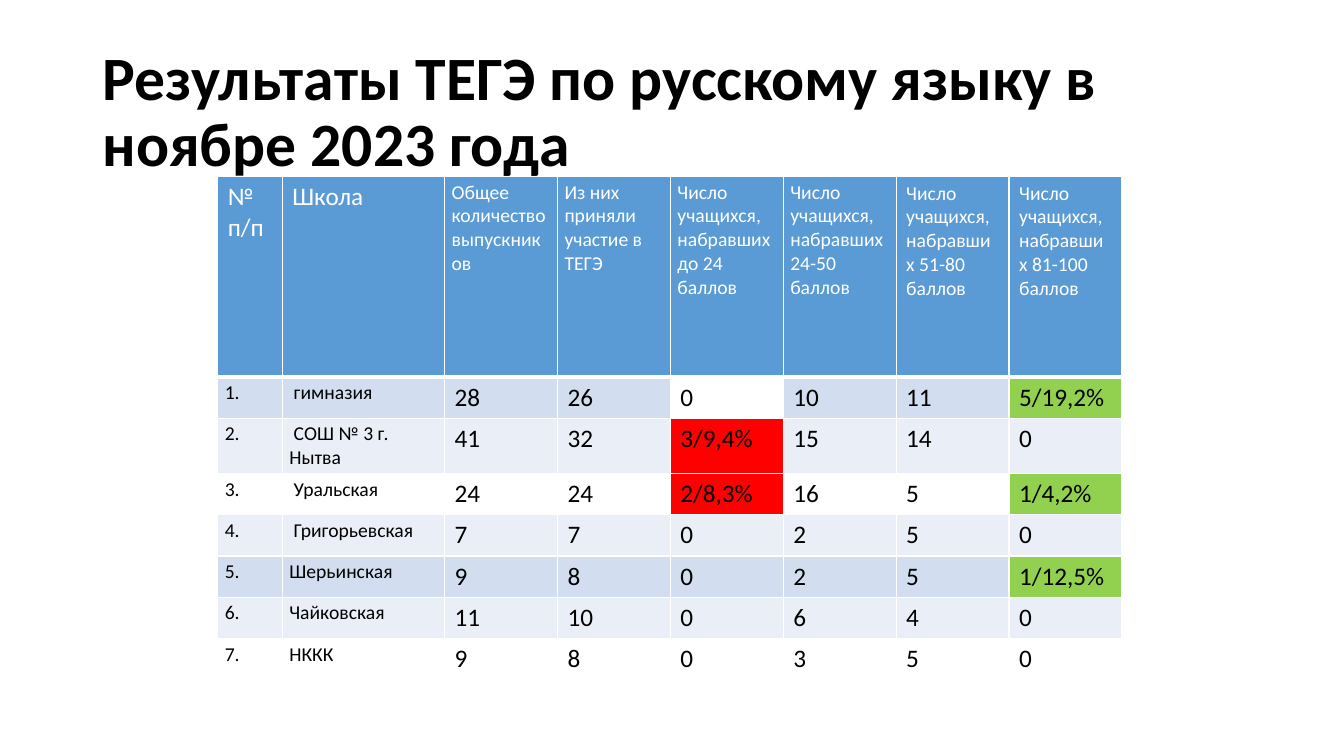
from lxml import etree
from pptx import Presentation
from pptx import util as u
from pptx.dml.color import RGBColor
from pptx.enum import text
from pptx.oxml.ns import qn

PX = 9144
FONT = "Calibri"
COLORS = {
    "black": "000000",
    "white": "FFFFFF",
    "header": "5B9BD5",
    "band_dark": "D2DEEF",
    "band_light": "EAEFF7",
    "low": "FF0000",
    "high": "92D050",
}
TITLE = "Результаты ТЕГЭ по русскому языку в ноябре 2023 года"
SCORE_RANGES = ["до 24", "24-50", "51-80", "81-100"]
HEADERS = [
    "№ п/п", "Школа", "Общее количество выпускников", "Из них приняли участие в ТЕГЭ",
] + [f"Число учащихся, набравших {score} баллов" for score in SCORE_RANGES]
SCHOOLS = [
    (" гимназия", "28", "26", "0", "10", "11", "5/19,2%"),
    (" СОШ № 3 г. Нытва", "41", "32", "3/9,4%", "15", "14", "0"),
    (" Уральская", "24", "24", "2/8,3%", "16", "5", "1/4,2%"),
    (" Григорьевская", "7", "7", "0", "2", "5", "0"),
    ("Шерьинская", "9", "8", "0", "2", "5", "1/12,5%"),
    ("Чайковская", "11", "10", "0", "6", "4", "0"),
    ("НККК", "9", "8", "0", "3", "5", "0"),
]
BANDS = ["band_dark", "band_light", None, "band_light", "band_dark", "band_light", None]
HIGHLIGHTS = {
    (1, 4): None, (2, 4): "low", (3, 4): "low",
    (1, 7): "high", (3, 7): "high", (5, 7): "high",
}
COL_WIDTHS = [64, 161] + [112] * 6
HEADER_HEIGHT, ROW_HEIGHT = 199, 41


def px(n):
    return u.Emu(n * PX)


def write_text(tf, content, size, color="black", bold=False, spacing=None):
    p = tf.paragraphs[0]
    p.alignment = text.PP_ALIGN.LEFT
    if spacing:
        p.line_spacing = spacing
    r = p.add_run()
    r.text = content
    r.font.name = FONT
    r.font.size = u.Pt(size)
    r.font.bold = bold
    r.font.color.rgb = RGBColor.from_string(COLORS[color])


def set_borders(cell, bottom=1):
    tcPr = cell._tc.get_or_add_tcPr()
    for tag, width in (("lnL", 1), ("lnR", 1), ("lnT", 1), ("lnB", bottom)):
        ln = etree.SubElement(tcPr, qn(f"a:{tag}"), w=str(u.Pt(width)))
        fill = etree.SubElement(ln, qn("a:solidFill"))
        etree.SubElement(fill, qn("a:srgbClr"), val=COLORS["white"])


def format_cell(cell, content, size, color, fill, tight, bottom=1):
    cell.margin_left = cell.margin_right = px(7 if tight else 10)
    cell.margin_top = cell.margin_bottom = px(4 if tight else 5)
    set_borders(cell, bottom)
    if fill:
        cell.fill.solid()
        cell.fill.fore_color.rgb = RGBColor.from_string(COLORS[fill])
    else:
        cell.fill.background()
    write_text(cell.text_frame, content, size, color)


def add_title(s, x, y, w, h):
    tf = s.shapes.add_textbox(px(x), px(y), px(w), px(h)).text_frame
    tf.word_wrap = True
    tf.vertical_anchor = text.MSO_ANCHOR.MIDDLE
    write_text(tf, TITLE, 44, bold=True, spacing=0.9)


def add_results(s, x, y, w, h):
    table = s.shapes.add_table(
        len(SCHOOLS) + 1, len(HEADERS), px(x), px(y), px(w), px(h)
    ).table
    table.first_row = table.horz_banding = False
    for column, width in zip(table.columns, COL_WIDTHS):
        column.width = px(width)
    for i, row in enumerate(table.rows):
        row.height = px(ROW_HEIGHT if i else HEADER_HEIGHT)
    for j, header in enumerate(HEADERS):
        format_cell(table.cell(0, j), header, 18 if j < 2 else 14, "white",
                    "header", 2 <= j <= 5, bottom=3)
    for i, (school, band) in enumerate(zip(SCHOOLS, BANDS), 1):
        for j, value in enumerate((f"{i}.",) + school):
            format_cell(table.cell(i, j), value, 14 if j < 2 else 18, "black",
                        HIGHLIGHTS.get((i, j), band), j < 2)


def main():
    prs = Presentation()
    prs.slide_width, prs.slide_height = px(1333), px(750)
    s = prs.slides.add_slide(prs.slide_layouts[6])
    add_title(s, 92, 40, 1150, 145)
    add_results(s, 216, 175, sum(COL_WIDTHS), HEADER_HEIGHT + ROW_HEIGHT * len(SCHOOLS))
    prs.save("out.pptx")


if __name__ == "__main__":
    main()
